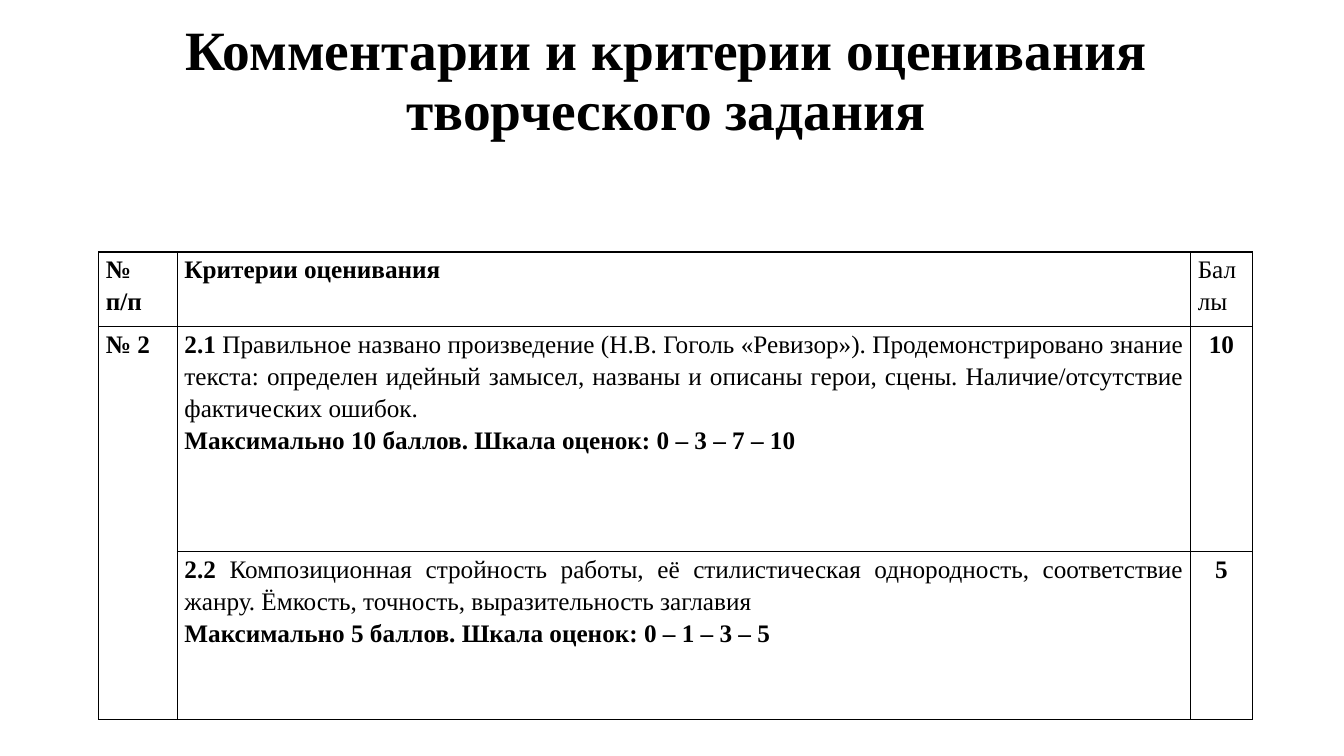
import pptx
import pptx.dml.color
import pptx.enum.text
import pptx.oxml
import pptx.oxml.ns
import pptx.util
from pptx.util import Inches

BLACK = pptx.dml.color.RGBColor(0, 0, 0)
WHITE = pptx.dml.color.RGBColor(255, 255, 255)
FONT = "Times New Roman"
ALIGN = pptx.enum.text.PP_ALIGN
ANCHOR = pptx.enum.text.MSO_ANCHOR


def add_run(p, text, size, bold):
    r = p.add_run()
    r.text = text
    r.font.name = FONT
    r.font.size = pptx.util.Pt(size)
    r.font.bold = bold
    r.font.color.rgb = BLACK


def add_borders(cell):
    tc_pr = cell._tc.get_or_add_tcPr()
    for index, side in enumerate(("lnL", "lnR", "lnT", "lnB")):
        line = pptx.oxml.parse_xml(
            f'<a:{side} {pptx.oxml.ns.nsdecls("a")} w="12700"><a:solidFill>'
            f'<a:srgbClr val="{BLACK}"/></a:solidFill></a:{side}>')
        tc_pr.insert(index, line)


prs = pptx.Presentation()
prs.slide_width, prs.slide_height = Inches(13.33), Inches(7.5)
s = prs.slides.add_slide(prs.slide_layouts[6])

# Title
sp = s.shapes.add_textbox(Inches(0.31), Inches(0.4), Inches(12.59), Inches(1.45))
tf = sp.text_frame
tf.word_wrap = True
tf.vertical_anchor = ANCHOR.BOTTOM
tf.margin_top, tf.margin_bottom = 0, Inches(0.44)
p = tf.paragraphs[0]
p.alignment = ALIGN.CENTER
p.line_spacing = 0.9
add_run(p, "Комментарии и критерии оценивания творческого задания", 39.6, True)

# Criteria table: each cell is (alignment, paragraphs), each paragraph a list of (text, bold)
ROWS = [
    [(ALIGN.LEFT, [[("№ п/п", True)]]),
     (ALIGN.LEFT, [[("Критерии оценивания", True)]]),
     (ALIGN.LEFT, [[("Баллы", False)]])],
    [(ALIGN.JUSTIFY, [[("№ 2", True)]]),
     (ALIGN.JUSTIFY, [
         [("2.1", True),
          (" Правильное названо произведение (Н.В. Гоголь «Ревизор»). "
           "Продемонстрировано знание текста: определен идейный замысел, названы и "
           "описаны герои, сцены. Наличие/отсутствие фактических ошибок.", False)],
         [("Максимально 10 баллов. Шкала оценок: 0 – 3 – 7 – 10", True)]]),
     (ALIGN.CENTER, [[("10", True)]])],
    [None,
     (ALIGN.JUSTIFY, [
         [("2.2 ", True),
          ("Композиционная стройность работы, её стилистическая однородность, "
           "соответствие жанру. Ёмкость, точность, выразительность заглавия", False)],
         [("Максимально 5 баллов. Шкала оценок: 0 – 1 – 3 – 5", True)]]),
     (ALIGN.CENTER, [[("5", True)]])],
]
table = s.shapes.add_table(3, 3, Inches(0.98), Inches(2.5),
                           Inches(11.44), Inches(4.64)).table
for column, width in zip(table.columns, (0.78, 10.05, 0.61)):
    column.width = Inches(width)
for row, height in zip(table.rows, (0.74, 2.23, 1.67)):
    row.height = Inches(height)
table.cell(1, 0).merge(table.cell(2, 0))

for i, row in enumerate(ROWS):
    for j, content in enumerate(row):
        cell = table.cell(i, j)
        cell.fill.solid()
        cell.fill.fore_color.rgb = WHITE
        add_borders(cell)
        if content is None:
            continue
        cell.margin_left = cell.margin_right = Inches(0.07)
        cell.margin_top = cell.margin_bottom = 0
        alignment, paragraphs = content
        tf = cell.text_frame
        for k, runs in enumerate(paragraphs):
            p = tf.add_paragraph() if k else tf.paragraphs[0]
            p.alignment = alignment
            p.line_spacing = 1.15
            for text, bold in runs:
                add_run(p, text, 18, bold)

prs.save("out.pptx")
